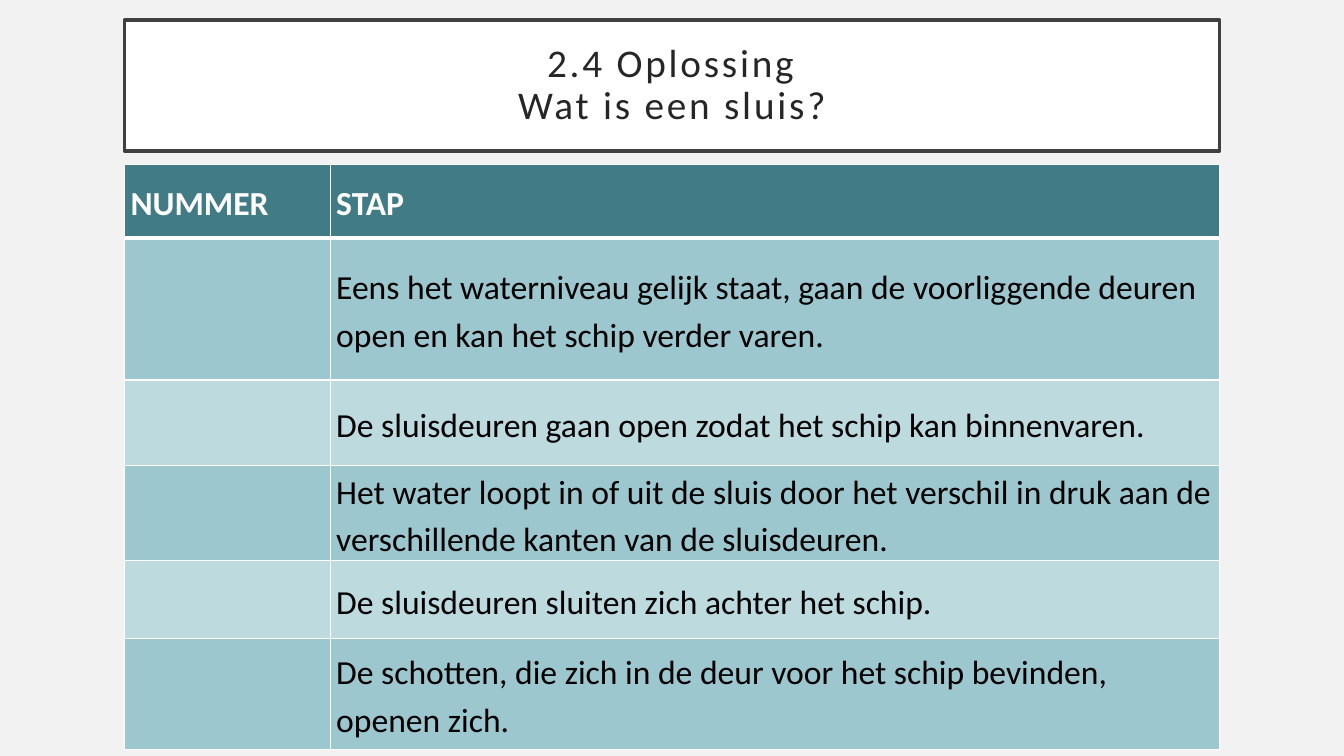
"""Build the slide that asks pupils to number the steps of a lock passage."""
from dataclasses import dataclass

from lxml import etree
from pptx import Presentation
from pptx import util as u
from pptx.dml.color import RGBColor
from pptx.enum import text
from pptx.oxml import ns

TITLE_LINES = ["2.4 Oplossing", "Wat is een sluis?"]
HEADINGS = ("NUMMER", "STAP")
STEPS = [
    "Eens het waterniveau gelijk staat, gaan de voorliggende deuren open en kan het schip verder varen.",
    "De sluisdeuren gaan open zodat het schip kan binnenvaren.",
    "Het water loopt in of uit de sluis door het verschil in druk aan de verschillende kanten van de sluisdeuren.",
    "De sluisdeuren sluiten zich achter het schip.",
    "De schotten, die zich in de deur voor het schip bevinden, openen zich.",
]

SLIDE_WIDTH, SLIDE_HEIGHT = 13.33, 7.5
COLUMN_WIDTHS = [2.04, 8.82]
ROW_HEIGHTS = [0.73, 1.41, 0.85, 0.92, 0.77, 1.1]
CONTENT_WIDTH = sum(COLUMN_WIDTHS)
LEFT = (SLIDE_WIDTH - CONTENT_WIDTH) / 2
TITLE_TOP, TITLE_HEIGHT, GAP = 0.2, 1.3, 0.13
TABLE_TOP = TITLE_TOP + TITLE_HEIGHT + GAP


@dataclass(frozen=True)
class Theme:
    font: str = "Calibri"
    title_size: int = 28
    table_size: int = 24
    background: str = "F2F2F2"
    white: str = "FFFFFF"
    frame: str = "404040"
    title_ink: str = "262626"
    ink: str = "000000"
    header: str = "417B85"
    bands: tuple = ("9CC7CE", "BDDADF")


THEME = Theme()


def paint(fill, color):
    fill.solid()
    fill.fore_color.rgb = RGBColor.from_string(color)


def add_run(paragraph, words, size, color, bold=False):
    run = paragraph.add_run()
    run.text = words
    run.font.name, run.font.size, run.font.bold = THEME.font, u.Pt(size), bold
    run.font.color.rgb = RGBColor.from_string(color)
    return run


def add_title(slide):
    title = slide.shapes.title
    title.left, title.top = u.Inches(LEFT), u.Inches(TITLE_TOP)
    title.width, title.height = u.Inches(CONTENT_WIDTH), u.Inches(TITLE_HEIGHT)
    paint(title.fill, THEME.white)
    paint(title.line.fill, THEME.frame)
    title.line.width = u.Pt(2.5)
    frame = title.text_frame
    frame.word_wrap = True
    frame.auto_size = text.MSO_AUTO_SIZE.NONE
    frame.vertical_anchor = text.MSO_ANCHOR.MIDDLE
    frame.margin_left = frame.margin_right = u.Inches(0.2)
    frame.margin_top = frame.margin_bottom = u.Inches(0.2)
    paragraph = frame.paragraphs[0]
    paragraph.alignment = text.PP_ALIGN.CENTER
    paragraph.line_spacing = 0.9
    for index, line in enumerate(TITLE_LINES):
        if index:
            paragraph.add_line_break()
        run = add_run(paragraph, line, THEME.title_size, THEME.title_ink)
        run.font._element.set("spc", "200")


def add_borders(cell, widths):
    properties = cell._tc.get_or_add_tcPr()
    for side, width in widths.items():
        line = etree.SubElement(properties, ns.qn(f"a:ln{side}"), w=str(u.Pt(width)))
        solid = etree.SubElement(line, ns.qn("a:solidFill"))
        etree.SubElement(solid, ns.qn("a:srgbClr"), val=THEME.white)


def format_cell(cell, words, row):
    is_header = row == 0
    add_borders(cell, {"L": 1, "R": 1, "T": 3 if row == 1 else 1, "B": 3 if is_header else 1})
    paint(cell.fill, THEME.header if is_header else THEME.bands[(row - 1) % 2])
    cell.vertical_anchor = text.MSO_ANCHOR.MIDDLE
    cell.margin_left = cell.margin_right = u.Inches(0.06)
    cell.margin_top = cell.margin_bottom = 0
    if words:
        paragraph = cell.text_frame.paragraphs[0]
        paragraph.line_spacing = 1.16
        paragraph.space_after = u.Pt(8)
        add_run(paragraph, words, THEME.table_size, THEME.white if is_header else THEME.ink, is_header)


def add_steps_table(slide):
    rows = [HEADINGS] + [("", step) for step in STEPS]
    table = slide.shapes.add_table(
        len(rows), len(HEADINGS), u.Inches(LEFT), u.Inches(TABLE_TOP),
        u.Inches(CONTENT_WIDTH), u.Inches(sum(ROW_HEIGHTS))).table
    for column, width in zip(table.columns, COLUMN_WIDTHS):
        column.width = u.Inches(width)
    for row, height in zip(table.rows, ROW_HEIGHTS):
        row.height = u.Inches(height)
    for row, entries in enumerate(rows):
        for column, words in enumerate(entries):
            format_cell(table.cell(row, column), words, row)


def main():
    presentation = Presentation()
    presentation.slide_width = u.Inches(SLIDE_WIDTH)
    presentation.slide_height = u.Inches(SLIDE_HEIGHT)
    slide = presentation.slides.add_slide(presentation.slide_layouts.get_by_name("Title Only"))
    paint(slide.background.fill, THEME.background)
    add_title(slide)
    add_steps_table(slide)
    presentation.save("out.pptx")


if __name__ == "__main__":
    main()
